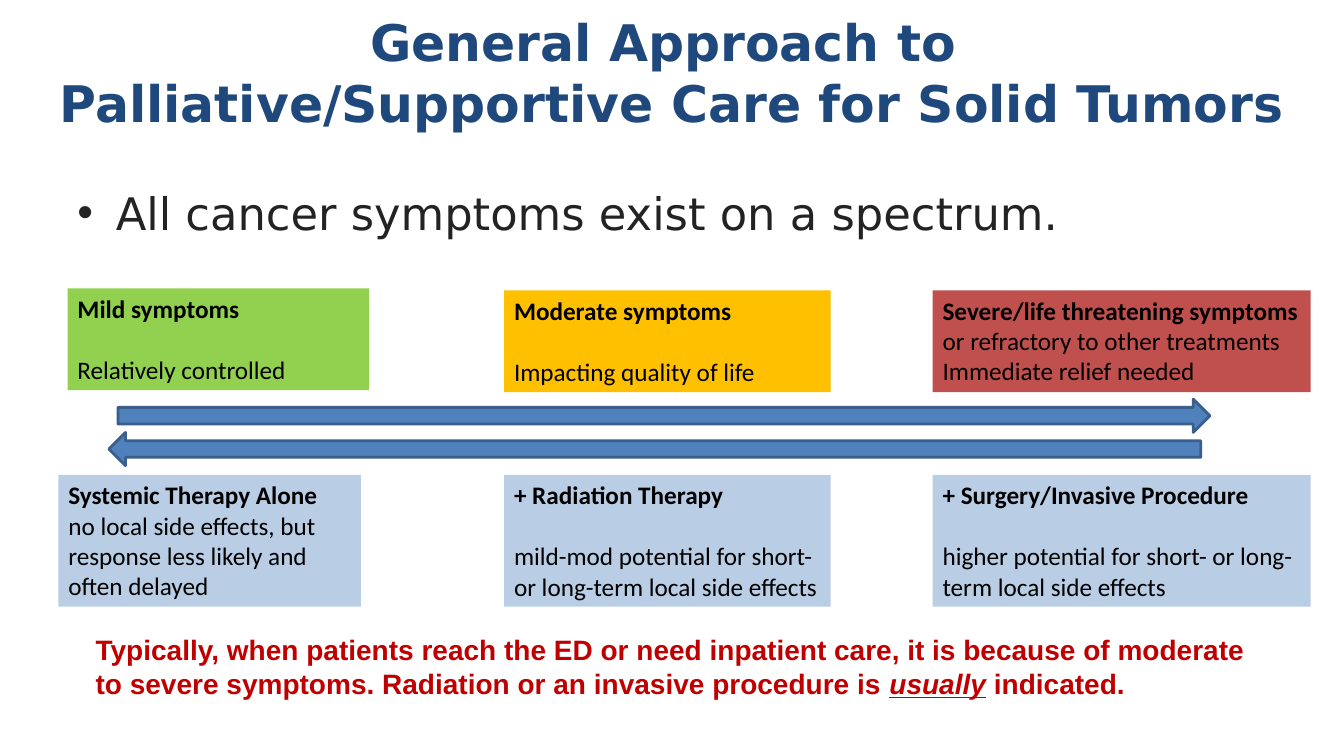
"""Builds a slide on the general approach to palliative care for solid tumors."""
from lxml import etree
from pptx import Presentation
from pptx.dml.color import RGBColor
from pptx.enum.shapes import MSO_SHAPE
from pptx.enum.text import MSO_ANCHOR, MSO_AUTO_SIZE, PP_ALIGN
from pptx.oxml.ns import qn
from pptx.util import Inches, Pt

RECTANGLE = MSO_SHAPE.RECTANGLE
RIGHT_ARROW = MSO_SHAPE.RIGHT_ARROW
LEFT_ARROW = MSO_SHAPE.LEFT_ARROW
TOP = MSO_ANCHOR.TOP
MIDDLE = MSO_ANCHOR.MIDDLE
LEFT = PP_ALIGN.LEFT
CENTER = PP_ALIGN.CENTER
GROW = MSO_AUTO_SIZE.SHAPE_TO_FIT_TEXT

COLORS = {
    "title": "1F497D", "body": "232323", "text": "000000", "note": "C00000",
    "arrow": "4F81BD", "arrow_line": "3A5F8C", "mild": "92D050",
    "moderate": "FFC000", "severe": "C0504D", "therapy": "B9CDE5",
}
HEADING_FONT = "DejaVu Sans"
CARD_FONT = "Calibri"
NOTE_FONT = "Arial"
CARD_SIZE = 18
SKIPPED_LINE = 22


class SpectrumSlide:
    def __init__(self, presentation):
        self.slide = presentation.slides.add_slide(presentation.slide_layouts[6])

    def color(self, name):
        return RGBColor.from_string(COLORS[name])

    def add_run(self, paragraph, text, font, size, color, bold=False, emphasis=False):
        run = paragraph.add_run()
        run.text = text
        run.font.name = font
        run.font.size = Pt(size)
        run.font.color.rgb = self.color(color)
        run.font.bold = bold
        run.font.italic = emphasis
        run.font.underline = emphasis

    def add_text_box(self, left, top, width, height, anchor=TOP, align=LEFT):
        box = self.slide.shapes.add_textbox(
            Inches(left), Inches(top), Inches(width), Inches(height))
        box.text_frame.word_wrap = True
        box.text_frame.vertical_anchor = anchor
        paragraph = box.text_frame.paragraphs[0]
        paragraph.alignment = align
        return paragraph

    def add_title(self, first_line, second_line):
        paragraph = self.add_text_box(0, 0.01, 13.33, 1.41, MIDDLE, CENTER)
        self.add_run(paragraph, first_line, HEADING_FONT, 36, "title", bold=True)
        paragraph.add_line_break()
        self.add_run(paragraph, second_line, HEADING_FONT, 36, "title", bold=True)

    def add_bullet(self, text):
        paragraph = self.add_text_box(0.67, 1.79, 12.08, 5.2)
        properties = paragraph._p.get_or_add_pPr()
        properties.set("marL", str(Inches(0.38)))
        properties.set("indent", str(Inches(-0.38)))
        etree.SubElement(properties, qn("a:buFont")).set("typeface", "Arial")
        etree.SubElement(properties, qn("a:buChar")).set("char", "•")
        self.add_run(paragraph, text, HEADING_FONT, 32, "body")

    def add_shape(self, kind, left, top, width, height, fill):
        shape = self.slide.shapes.add_shape(
            kind, Inches(left), Inches(top), Inches(width), Inches(height))
        shape.shadow.inherit = False
        shape.fill.solid()
        shape.fill.fore_color.rgb = self.color(fill)
        return shape

    def add_arrow(self, kind, left, top):
        arrow = self.add_shape(kind, left, top, 10.83, 0.33, "arrow")
        arrow.line.color.rgb = self.color("arrow_line")
        arrow.line.width = Pt(2)

    def add_card(self, left, top, width, height, fill, paragraphs, gap):
        card = self.add_shape(RECTANGLE, left, top, width, height, fill)
        card.line.fill.background()
        frame = card.text_frame
        frame.word_wrap = True
        frame.auto_size = GROW
        frame.vertical_anchor = TOP
        for index, runs in enumerate(paragraphs):
            paragraph = frame.add_paragraph() if index else frame.paragraphs[0]
            paragraph.alignment = LEFT
            if index and gap:
                paragraph.space_before = Pt(gap)
            for text, bold in runs:
                self.add_run(paragraph, text, CARD_FONT, CARD_SIZE, "text", bold)

    def add_note(self, runs):
        paragraph = self.add_text_box(0.85, 6.23, 11.86, 0.77)
        for text, emphasis in runs:
            self.add_run(paragraph, text, NOTE_FONT, 20, "note", True, emphasis)


def main():
    presentation = Presentation()
    presentation.slide_width = Inches(13.33)
    presentation.slide_height = Inches(7.5)
    page = SpectrumSlide(presentation)

    page.add_title("General Approach to ", "Palliative/Supportive Care for Solid Tumors")
    page.add_bullet("All cancer symptoms exist on a spectrum.")
    page.add_arrow(RIGHT_ARROW, 1.17, 3.96)
    page.add_arrow(LEFT_ARROW, 1.08, 4.29)

    symptoms = [
        (0.67, 2.86, 2.99, "mild", SKIPPED_LINE,
         [[("Mild symptoms", True)], [("Relatively controlled", False)]]),
        (5, 2.88, 3.24, "moderate", SKIPPED_LINE,
         [[("Moderate symptoms", True)], [("Impacting quality of life", False)]]),
        (9.25, 2.88, 3.75, "severe", 0,
         [[("Severe/life threatening symptoms ", True),
           ("or refractory to other treatments", False)],
          [("Immediate relief needed", False)]]),
    ]
    for left, top, width, fill, gap, paragraphs in symptoms:
        page.add_card(left, top, width, 1.01, fill, paragraphs, gap)

    therapies = [
        (0.58, 3, 0, "Systemic Therapy Alone",
         "no local side effects, but response less likely and often delayed"),
        (5, 3.24, SKIPPED_LINE, "+ Radiation Therapy",
         "mild-mod potential for short- or long-term local side effects"),
        (9.25, 3.75, SKIPPED_LINE, "+ Surgery/Invasive Procedure",
         "higher potential for short- or long-term local side effects"),
    ]
    for left, width, gap, heading, detail in therapies:
        paragraphs = [[(heading, True)], [(detail, False)]]
        page.add_card(left, 4.71, width, 1.31, "therapy", paragraphs, gap)

    page.add_note([
        ("Typically, when patients reach the ED or need inpatient care, it is because of "
         "moderate to severe symptoms. Radiation or an invasive procedure is ", False),
        ("usually", True),
        (" indicated.", False),
    ])
    presentation.save("out.pptx")


if __name__ == "__main__":
    main()
